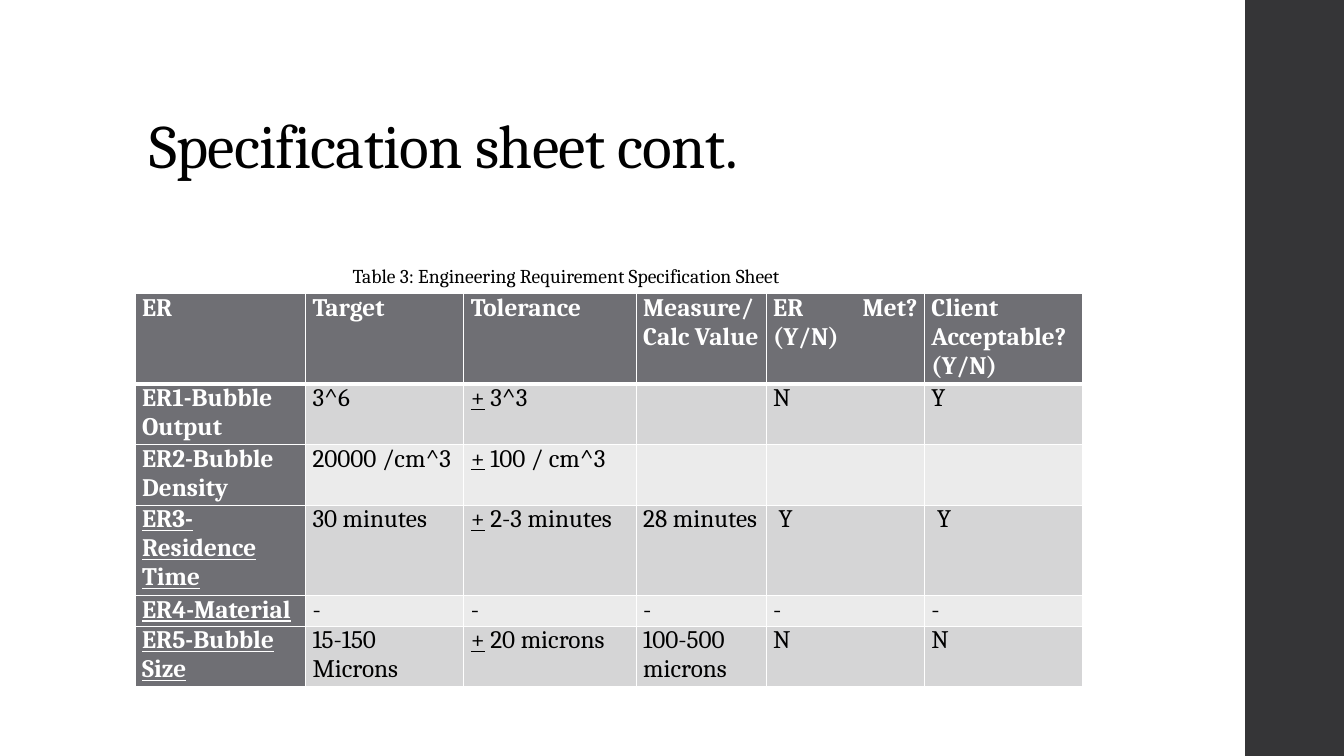
from dataclasses import dataclass

from pptx import Presentation
from pptx.dml.color import RGBColor
from pptx.enum.shapes import MSO_SHAPE
from pptx.enum.text import MSO_ANCHOR, PP_ALIGN
from pptx.oxml import parse_xml
from pptx.oxml.ns import nsdecls
from pptx.util import Inches, Pt


@dataclass(frozen=True)
class Theme:
    font: str = "Cambria"
    title: int = 44
    caption: int = 14
    body: int = 18
    black: str = "000000"
    white: str = "FFFFFF"
    side: str = "353537"
    head: str = "6F6F74"
    bands: tuple[str, str] = ("D5D5D6", "EBEBEB")


@dataclass(frozen=True)
class Requirement:
    name: str
    values: tuple[str, ...]
    lines: int
    underlined: bool = False


THEME = Theme()
LINE_HEIGHT = 0.29
COLUMNS = (1.69, 1.57, 1.71, 1.29, 1.57, 1.57)
HEADER = Requirement(
    "ER",
    ("Target", "Tolerance", "Measure/Calc Value", "ER Met? (Y/N)", "Client Acceptable? (Y/N)"),
    3,
)
REQUIREMENTS = (
    Requirement("ER1-Bubble Output", ("3^6", "+ 3^3", "", "N", "Y"), 2),
    Requirement("ER2-Bubble Density", ("20000 /cm^3", "+ 100 / cm^3", "", "", ""), 2),
    Requirement("ER3-Residence Time", ("30 minutes", "+ 2-3 minutes", "28 minutes", " Y", " Y"), 3, True),
    Requirement("ER4-Material", ("-",) * 5, 1, True),
    Requirement("ER5-Bubble Size", ("15-150 Microns", "+ 20 microns", "100-500 microns", "N", "N"), 2, True),
)


def style_run(r, size: int, color: str, bold: bool = False, underline: bool = False) -> None:
    r.font.name = THEME.font
    r.font.size = Pt(size)
    r.font.color.rgb = RGBColor.from_string(color)
    r.font.bold = bold
    r.font.underline = underline


def add_text(s, text: str, box: tuple[float, ...], size: int, anchor: MSO_ANCHOR):
    tf = s.shapes.add_textbox(*map(Inches, box)).text_frame
    tf.word_wrap = True
    tf.vertical_anchor = anchor
    tf.text = text
    p = tf.paragraphs[0]
    style_run(p.runs[0], size, THEME.black)
    return p


def set_borders(cell, top: int, bottom: int) -> None:
    tc_pr = cell._tc.get_or_add_tcPr()
    for side, width in (("L", 1), ("R", 1), ("T", top), ("B", bottom)):
        tc_pr.append(parse_xml(
            f'<a:ln{side} {nsdecls("a")} w="{Pt(width)}"><a:solidFill>'
            f'<a:srgbClr val="{THEME.white}"/></a:solidFill></a:ln{side}>'
        ))


def fill_cell(cell, text: str, fill: str, heading: bool, underline: bool, top: int, bottom: int) -> None:
    set_borders(cell, top, bottom)
    cell.fill.solid()
    cell.fill.fore_color.rgb = RGBColor.from_string(fill)
    cell.margin_left = cell.margin_right = Inches(0.07)
    cell.margin_top = cell.margin_bottom = 0
    p = cell.text_frame.paragraphs[0]
    p.alignment = PP_ALIGN.JUSTIFY
    parts = ("+", text[1:]) if text.startswith("+") else (text,)
    for part in filter(None, parts):
        r = p.add_run()
        r.text = part
        color = THEME.white if heading else THEME.black
        style_run(r, THEME.body, color, heading, underline or part == "+")


def add_requirements(s) -> None:
    rows = (HEADER, *REQUIREMENTS)
    height = LINE_HEIGHT * sum(row.lines for row in rows)
    table = s.shapes.add_table(
        len(rows), len(COLUMNS), Inches(1.34), Inches(2.91), Inches(sum(COLUMNS)), Inches(height)
    ).table
    for column, width in zip(table.columns, COLUMNS):
        column.width = Inches(width)
    for i, row in enumerate(rows):
        table.rows[i].height = Inches(LINE_HEIGHT * row.lines)
        for j, text in enumerate((row.name, *row.values)):
            heading = i == 0 or j == 0
            fill = THEME.head if heading else THEME.bands[(i - 1) % 2]
            fill_cell(
                table.cell(i, j), text, fill, heading, row.underlined and j == 0,
                top=3 if i == 1 else 1, bottom=3 if i == 0 else 1,
            )


def main() -> None:
    prs = Presentation()
    prs.slide_width, prs.slide_height = Inches(13.33), Inches(7.5)
    s = prs.slides.add_slide(prs.slide_layouts[6])

    side = s.shapes.add_shape(MSO_SHAPE.RECTANGLE, Inches(12.35), 0, Inches(0.98), Inches(7.5))
    side.shadow.inherit = False
    side.fill.solid()
    side.fill.fore_color.rgb = RGBColor.from_string(THEME.side)
    side.line.fill.background()

    p = add_text(s, "Specification sheet cont.", (1.38, 0.4, 10.6, 1.45), THEME.title, MSO_ANCHOR.BOTTOM)
    p.line_spacing = 0.9
    p.runs[0]._r.get_or_add_rPr().set("spc", "-50")

    add_requirements(s)
    add_text(
        s, "Table 3: Engineering Requirement Specification Sheet",
        (3.4, 2.57, 6.56, 0.34), THEME.caption, MSO_ANCHOR.TOP,
    )
    prs.save("out.pptx")


if __name__ == "__main__":
    main()
